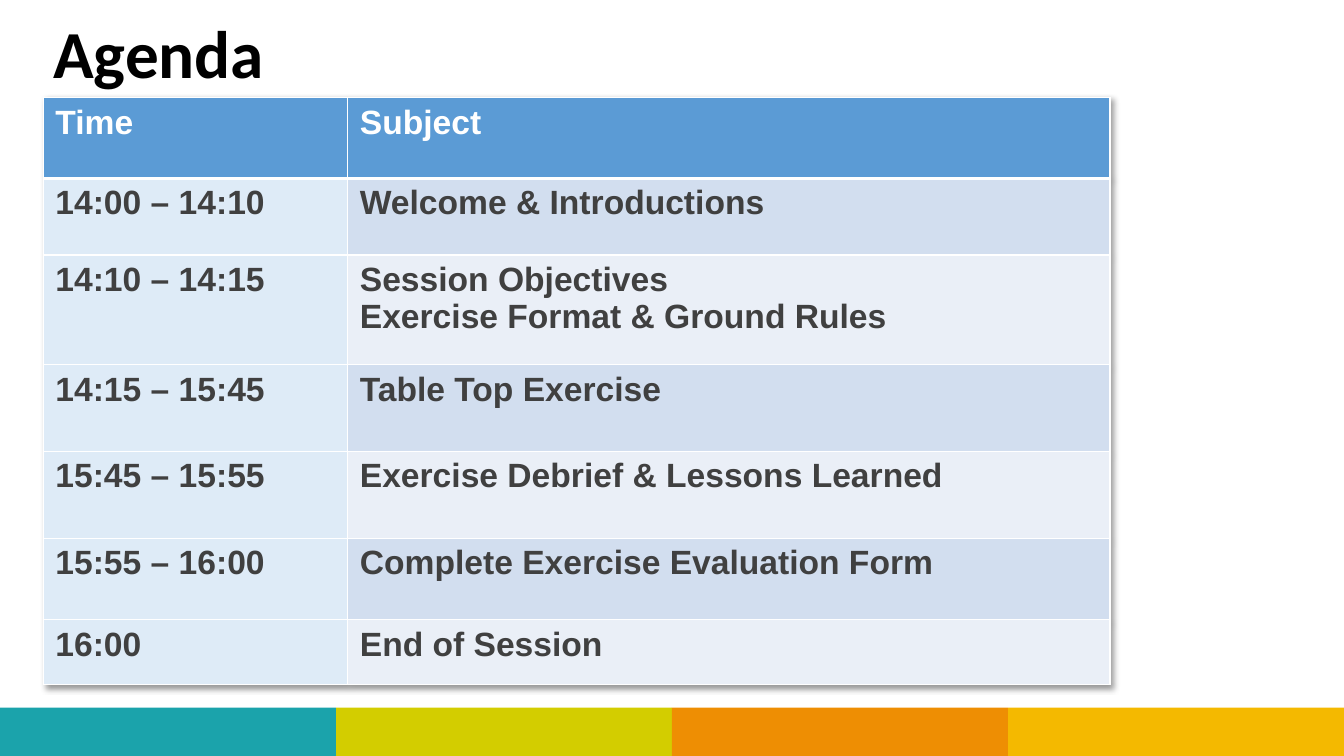
from dataclasses import dataclass

from lxml.etree import SubElement
from pptx import Presentation
from pptx.dml.color import RGBColor
from pptx.enum.shapes import MSO_SHAPE as Shape
from pptx.enum.text import MSO_ANCHOR as Anchor
from pptx.oxml import parse_xml
from pptx.oxml.ns import nsdecls, qn
from pptx.util import Inches, Pt


@dataclass(frozen=True)
class Theme:
    title_font: str = "Calibri"
    table_font: str = "Arial"
    title_size: int = 48
    table_size: int = 24
    title: str = "000000"
    header_text: str = "FFFFFF"
    body_text: str = "404040"
    header_fill: str = "5B9BD5"
    time_fill: str = "DEEBF7"
    subject_fills: tuple = ("D2DEEF", "EAEFF7")
    border: str = "FFFFFF"
    stripes: tuple = ("1BA3AB", "D3CD00", "EE8E03", "F4B900")


THEME = Theme()
SLIDE_WIDTH, SLIDE_HEIGHT = 13.33, 7.5
COLUMN_WIDTHS = (3.02, 7.56)

# Row height, time, subject lines
AGENDA = (
    (0.8, "Time", ("Subject",)),
    (0.76, "14:00 – 14:10", ("Welcome & Introductions",)),
    (1.09, "14:10 – 14:15", ("Session Objectives", "Exercise Format & Ground Rules")),
    (0.86, "14:15 – 15:45", ("Table Top Exercise",)),
    (0.86, "15:45 – 15:55", ("Exercise Debrief & Lessons Learned",)),
    (0.81, "15:55 – 16:00", ("Complete Exercise Evaluation Form",)),
    (0.64, "16:00", ("End of Session",)),
)


def add_run(para, text, font, size, color):
    span = para.add_run()
    span.text = text
    span.font.name = font
    span.font.size = Pt(size)
    span.font.bold = True
    span.font.color.rgb = RGBColor.from_string(color)


def add_stripes(page):
    width = SLIDE_WIDTH / len(THEME.stripes)
    for index, color in enumerate(THEME.stripes):
        stripe = page.shapes.add_shape(
            Shape.RECTANGLE, Inches(index * width), Inches(7.02), Inches(width), Inches(0.48))
        stripe.shadow.inherit = False
        stripe.fill.solid()
        stripe.fill.fore_color.rgb = RGBColor.from_string(color)
        stripe.line.fill.background()


def add_title(page, text):
    box = page.shapes.add_textbox(Inches(0.43), Inches(0.13), Inches(10.7), Inches(0.84))
    frame = box.text_frame
    frame.word_wrap = True
    frame.vertical_anchor = Anchor.BOTTOM
    para = frame.paragraphs[0]
    para.line_spacing = 0.9
    add_run(para, text, THEME.title_font, THEME.title_size, THEME.title)


def set_borders(cell, widths):
    """Draw the left, right, top and bottom borders, in points."""
    properties = cell._tc.get_or_add_tcPr()
    for side, width in zip("LRTB", widths):
        line = SubElement(properties, qn(f"a:ln{side}"), w=str(Pt(width)))
        fill = SubElement(line, qn("a:solidFill"))
        SubElement(fill, qn("a:srgbClr"), val=THEME.border)


def fill_cell(cell, lines, fill, color, border_widths):
    set_borders(cell, border_widths)
    cell.fill.solid()
    cell.fill.fore_color.rgb = RGBColor.from_string(fill)
    cell.margin_left = cell.margin_right = Inches(0.12)
    cell.margin_top = cell.margin_bottom = Inches(0.06)
    frame = cell.text_frame
    for index, text in enumerate(lines):
        para = frame.add_paragraph() if index else frame.paragraphs[0]
        add_run(para, text, THEME.table_font, THEME.table_size, color)


def add_table_shadow(table):
    shadow = parse_xml(
        f'<a:effectLst {nsdecls("a")}>'
        '<a:outerShdw blurRad="50800" dist="38100" dir="2700000" algn="tl" rotWithShape="0">'
        '<a:srgbClr val="000000"><a:alpha val="40000"/></a:srgbClr>'
        '</a:outerShdw></a:effectLst>')
    table._tbl.tblPr.insert(0, shadow)


def add_agenda(page):
    height = sum(row[0] for row in AGENDA)
    table = page.shapes.add_table(
        len(AGENDA), len(COLUMN_WIDTHS), Inches(0.43), Inches(0.97),
        Inches(sum(COLUMN_WIDTHS)), Inches(height)).table
    add_table_shadow(table)
    for column, width in zip(table.columns, COLUMN_WIDTHS):
        column.width = Inches(width)

    for index, (row_height, time, subject) in enumerate(AGENDA):
        table.rows[index].height = Inches(row_height)
        if index == 0:
            fills = (THEME.header_fill, THEME.header_fill)
            color, borders = THEME.header_text, (1, 1, 1, 3)
        else:
            fills = (THEME.time_fill, THEME.subject_fills[(index - 1) % 2])
            color, borders = THEME.body_text, (1, 1, 3 if index == 1 else 1, 1)
        for column, lines in enumerate(((time,), subject)):
            fill_cell(table.cell(index, column), lines, fills[column], color, borders)


def main():
    deck = Presentation()
    deck.slide_width = Inches(SLIDE_WIDTH)
    deck.slide_height = Inches(SLIDE_HEIGHT)
    page = deck.slides.add_slide(deck.slide_layouts[6])
    add_stripes(page)
    add_title(page, "Agenda")
    add_agenda(page)
    deck.save("out.pptx")


if __name__ == "__main__":
    main()
